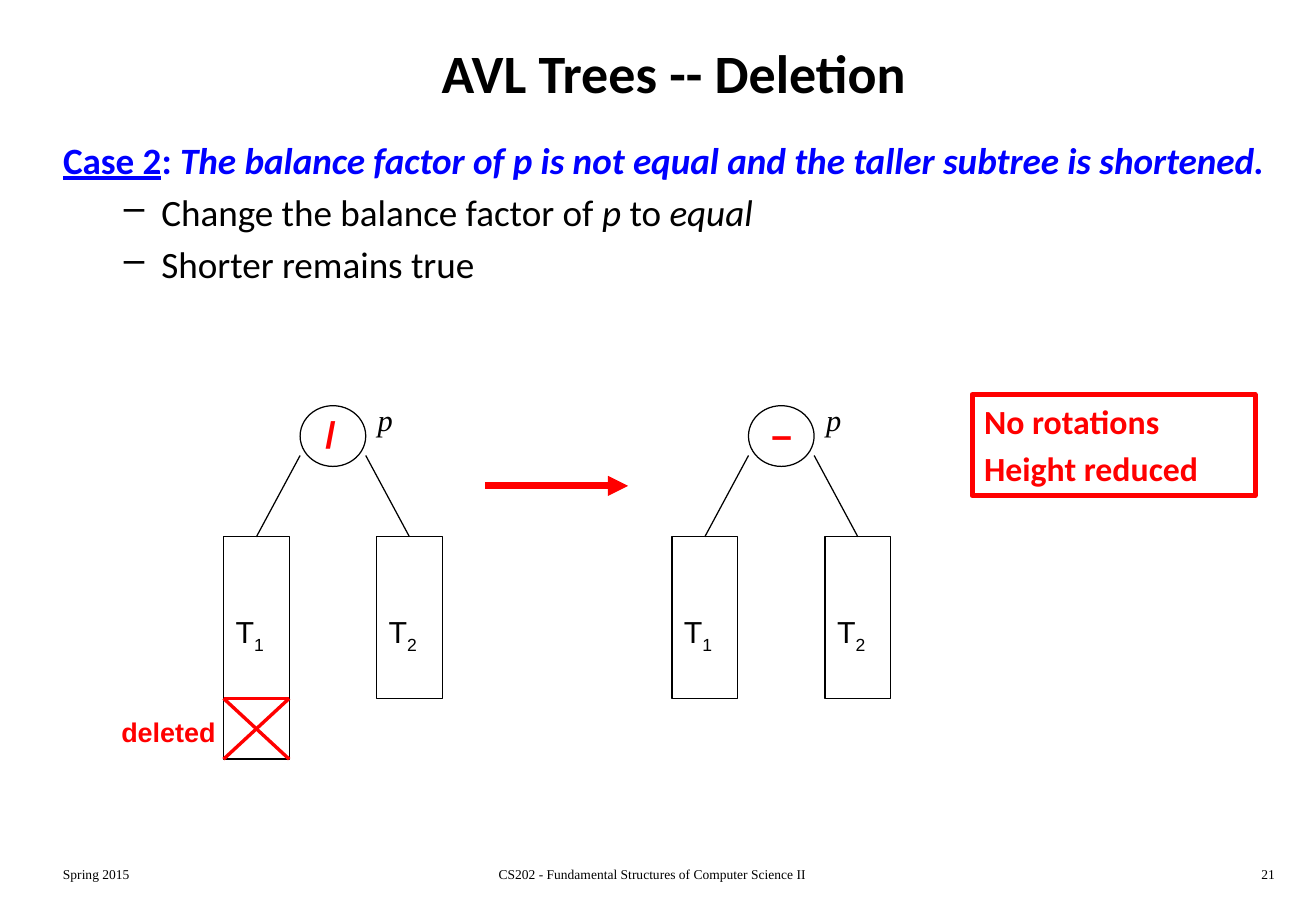
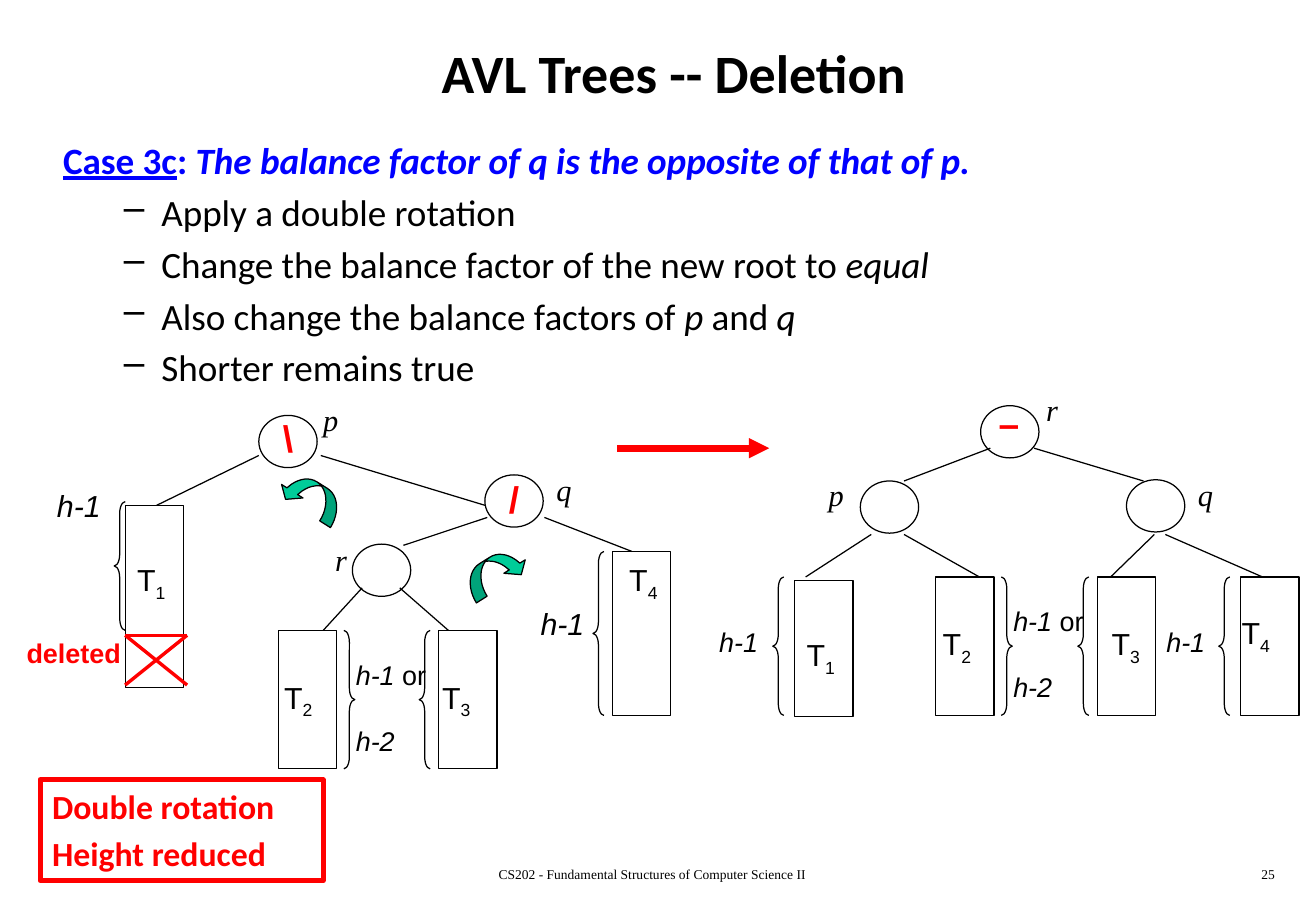
import pptx
import pptx.util
import pptx.dml.color
import pptx.enum.shapes
import pptx.enum.text
import pptx.oxml.ns
from lxml import etree

PX = 9144  # 100 px to the inch
BLACK, RED, BLUE, GREEN, WHITE = "000000", "FF0000", "0000FF", "00CC99", "FFFFFF"
SHAPE = pptx.enum.shapes.MSO_SHAPE
ALIGN = pptx.enum.text.PP_ALIGN
ANCHOR = pptx.enum.text.MSO_ANCHOR

# Label styles: font, size, colour, flags, width, height
STYLES = {
    "node": ("Times New Roman", 18, BLACK, "i", 55, 40),
    "balance": ("Arial", 22, RED, "b", 45, 47),
    "tree": ("Arial", 18, BLACK, "", 63, 40),
    "height": ("Arial", 18, BLACK, "i", 87, 40),
    "small": ("Arial", 16, BLACK, "i", 87, 37),
    "deleted": ("Arial", 16, RED, "b", 126, 37),
}
TITLE = "AVL Trees -- Deletion"
COURSE = "CS202 - Fundamental Structures of Computer Science II"

# Slide text: runs are (text, flags)
CASE_2 = {
    "heading": ("Case 2", "The balance factor of p is not equal and the taller subtree is shortened."),
    "points": [
        [("Change the balance factor of ", ""), ("p ", "i"), ("to ", ""), ("equal", "i")],
        [("Shorter remains true", "")],
    ],
    "term": "Spring 2015",
    "number": "21",
    "result": (["No rotations", "Height reduced"], 800, 325),
    "arrow": (399, 400, 517),
}
CASE_3C = {
    "heading": ("Case 3c", "The balance factor of q is the opposite of that of p."),
    "points": [
        [("Apply a double rotation", "")],
        [("Change the balance factor of the new root to ", ""), ("equal", "i")],
        [("Also change the balance factors of ", ""), ("p", "i"), (" and ", ""), ("q", "i")],
        [("Shorter remains true", "")],
    ],
    "term": "",  # the result box takes this place
    "number": "25",
    "result": (["Double rotation", "Height reduced"], 33, 642),
    "arrow": (508, 369, 633),
}

# Case 2 trees: left offset, balance sign, sign left, T1 height
CASE_2_TREES = [(0, "/", 258, 183), (369, "–", 625, 133)]

# Case 3c diagram
NODES = [(213, 342), (399, 391), (290, 448), (807, 334), (708, 396), (927, 395)]
SUBTREES = [  # left, top, height
    (103, 416, 150), (229, 519, 114), (361, 519, 114), (504, 454, 135),
    (654, 478, 112), (770, 475, 114), (903, 475, 114), (1021, 475, 114),
]
EDGES = [
    (213, 375, 129, 416), (264, 375, 399, 416), (401, 426, 332, 449),
    (448, 426, 520, 454), (298, 484, 266, 519), (329, 484, 369, 519),
    (815, 369, 744, 396), (851, 369, 941, 396), (717, 440, 663, 475),
    (744, 440, 806, 475), (950, 440, 914, 475), (959, 440, 1039, 475),
]
LEFT_BRACES = [
    (94, 413, 106), (345, 519, 114), (488, 454, 135),
    (636, 475, 114), (887, 475, 114), (1003, 475, 114),
]
RIGHT_BRACES = [(283, 519, 114), (824, 475, 114)]
ROTATIONS = [(243, 382, 302.2, "V"), (395, 444, 57.8, "HV")]
LABELS = [
    ("node", "p", 256, 325), ("node", "q", 448, 383), ("node", "r", 266, 441),
    ("node", "r", 851, 317), ("node", "p", 672, 387), ("node", "q", 976, 387),
    ("balance", "\\", 223, 337), ("balance", "/", 409, 387), ("balance", "–", 812, 325),
    ("tree", "T1", 103, 457), ("tree", "T2", 224, 554), ("tree", "T3", 354, 554),
    ("tree", "T4", 508, 457), ("tree", "T1", 654, 519), ("tree", "T2", 766, 510),
    ("tree", "T3", 905, 510), ("tree", "T4", 1012, 501),
    ("height", "h-1", 37, 396), ("height", "h-1", 435, 493),
    ("small", "h-1", 582, 510), ("small", "h-1", 950, 510),
    ("deleted", "deleted", 12, 519),
]
HEIGHT_CHOICES = [(283, 537), (824, 493)]


def px(*lengths):
    return [pptx.util.Emu(length * PX) for length in lengths]


def rgb(value):
    return pptx.dml.color.RGBColor.from_string(value)


def xml_child(parent, tag, **attributes):
    return etree.SubElement(parent, pptx.oxml.ns.qn(tag), attributes)


# Text
def add_run(para, text, font, size, color, flags=""):
    span = para.add_run()
    span.text = text
    span.font.name, span.font.size = font, pptx.util.Pt(size)
    span.font.color.rgb = rgb(color)
    span.font.bold, span.font.italic = "b" in flags, "i" in flags
    span.font.underline = "u" in flags
    return span


def add_box(page, x, y, w, h, align=ALIGN.LEFT, anchor=ANCHOR.TOP):
    box = page.shapes.add_textbox(*px(x, y, w, h))
    box.text_frame.word_wrap = True
    box.text_frame.vertical_anchor = anchor
    box.text_frame.paragraphs[0].alignment = align
    return box.text_frame


def next_para(frame, space):
    para = frame.add_paragraph()
    para.alignment = ALIGN.LEFT
    para.space_before = pptx.util.Pt(space)
    return para


def add_label(page, style, text, x, y):
    font, size, color, flags, w, h = STYLES[style]
    para = add_box(page, x, y, w, h).paragraphs[0]
    if style == "tree":
        add_run(para, text[0], font, size, color)
        digit = add_run(para, text[1:], font, size, color)
        digit._r.get_or_add_rPr().set("baseline", "-25000")
    else:
        add_run(para, text, font, size, color, flags)


def add_height_choice(page, x, y):
    frame = add_box(page, x, y, 82, 64)
    first = frame.paragraphs[0]
    add_run(first, "h-1 ", "Arial", 16, BLACK, "i")
    add_run(first, "or", "Arial", 16, BLACK)
    add_run(next_para(frame, 20), "h-2", "Arial", 16, BLACK, "i")


# Shapes and lines
def add_outline(page, kind, x, y, w, h, color=BLACK, weight=0.75, fill=None):
    shape = page.shapes.add_shape(kind, *px(x, y, w, h))
    shape.shadow.inherit = False
    if fill:
        shape.fill.solid()
        shape.fill.fore_color.rgb = rgb(fill)
    else:
        shape.fill.background()
    shape.line.color.rgb = rgb(color)
    shape.line.width = pptx.util.Pt(weight)
    return shape


def add_line(page, x1, y1, x2, y2, color=BLACK, weight=0.75, arrow=False):
    straight = pptx.enum.shapes.MSO_CONNECTOR.STRAIGHT
    line = page.shapes.add_connector(straight, *px(x1, y1, x2, y2))
    line.line.color.rgb = rgb(color)
    line.line.width = pptx.util.Pt(weight)
    if arrow:
        xml_child(line.line._get_or_add_ln(), "a:tailEnd", type="triangle")
    xml_child(line._element.spPr, "a:effectLst")


def add_cross(page, x, y, w, h):
    for ends in [(x, y, x + w, y), (x, y, x + w, y + h), (x + w, y, x, y + h)]:
        add_line(page, *ends, RED, 2)


def add_brace(page, kind, x, y, h):
    brace = add_outline(page, kind, x, y, 9, h)
    brace.adjustments[0] = 1.08


def add_rotation(page, x, y, angle, flips):
    turn = add_outline(page, SHAPE.CURVED_LEFT_ARROW, x, y, 26, 54, fill=GREEN)
    for index, value in enumerate((0.4, 0.8, 0.333)):
        turn.adjustments[index] = value
    turn.rotation = angle
    for axis in flips:
        turn._element.spPr.xfrm.set("flip" + axis, "1")


# Parts that both slides share
def add_page(deck, case):
    page = deck.slides.add_slide(deck.slide_layouts[6])
    title = add_box(page, 42, 17, 1025, 84, ALIGN.CENTER, ANCHOR.MIDDLE)
    add_run(title.paragraphs[0], TITLE, "Calibri", 32, BLACK, "b")

    body = add_box(page, 42, 108, 1041, 175)
    name, statement = case["heading"]
    for text, flags in [(name, "bu"), (": ", "b"), (statement, "bi")]:
        add_run(body.paragraphs[0], text, "Calibri", 22, BLUE, flags)
    for point in case["points"]:
        para = next_para(body, 4.4)
        for text, flags in point:
            add_run(para, text, "Calibri", 22, BLACK, flags)
        props = para._p.get_or_add_pPr()
        props.set("marL", str(81 * PX))
        props.set("indent", str(-31 * PX))
        xml_child(props, "a:buChar", char="–")

    footers = [
        (case["term"], 42, 226, ALIGN.LEFT),
        (COURSE, 334, 406, ALIGN.CENTER),
        (case["number"], 833, 226, ALIGN.RIGHT),
    ]
    for text, x, w, align in footers:
        if text:
            para = add_box(page, x, 708, w, 25, align).paragraphs[0]
            add_run(para, text, "Times New Roman", 8, BLACK)

    lines, x, y = case["result"]
    frame = add_outline(page, SHAPE.RECTANGLE, x, y, 233, 83, RED, 3).text_frame
    frame.vertical_anchor = ANCHOR.TOP
    frame.paragraphs[0].alignment = ALIGN.LEFT
    for index, text in enumerate(lines):
        para = next_para(frame, 4) if index else frame.paragraphs[0]
        add_run(para, text, "Calibri", 20, RED, "b")

    start, y, end = case["arrow"]
    add_line(page, start, y, end, y, RED, 4, arrow=True)
    return page


def draw_case_2(page):
    for left, sign, sign_left, first_height in CASE_2_TREES:
        add_outline(page, SHAPE.OVAL, left + 247, 334, 54, 50)
        add_label(page, "balance", sign, sign_left, 334)
        add_label(page, "node", "p", left + 301, 325)
        subtrees = [("T1", 184, first_height, 247), ("T2", 310, 133, 301)]
        for name, x, h, edge_x in subtrees:
            add_outline(page, SHAPE.RECTANGLE, left + x, 442, 54, h)
            add_line(page, left + edge_x, 375, left + x + 27, 442)
            add_label(page, "tree", name, left + x, 500)
    add_cross(page, 184, 575, 54, 50)
    add_label(page, "deleted", "deleted", 90, 584)


def draw_case_3c(page):
    for x, y in NODES:
        add_outline(page, SHAPE.OVAL, x, y, 48, 43)
    for x, y, h in SUBTREES:
        add_outline(page, SHAPE.RECTANGLE, x, y, 48, h)
    for edge in EDGES:
        add_line(page, *edge)
    for kind, braces in [(SHAPE.LEFT_BRACE, LEFT_BRACES), (SHAPE.RIGHT_BRACE, RIGHT_BRACES)]:
        for brace in braces:
            add_brace(page, kind, *brace)
    for rotation in ROTATIONS:
        add_rotation(page, *rotation)
    add_cross(page, 103, 523, 51, 41)
    for label in LABELS:
        add_label(page, *label)
    for place in HEIGHT_CHOICES:
        add_height_choice(page, *place)


def main():
    deck = pptx.Presentation()
    deck.slide_width, deck.slide_height = px(1083, 750)
    draw_case_2(add_page(deck, CASE_2))
    draw_case_3c(add_page(deck, CASE_3C))
    deck.save("out.pptx")


if __name__ == "__main__":
    main()
